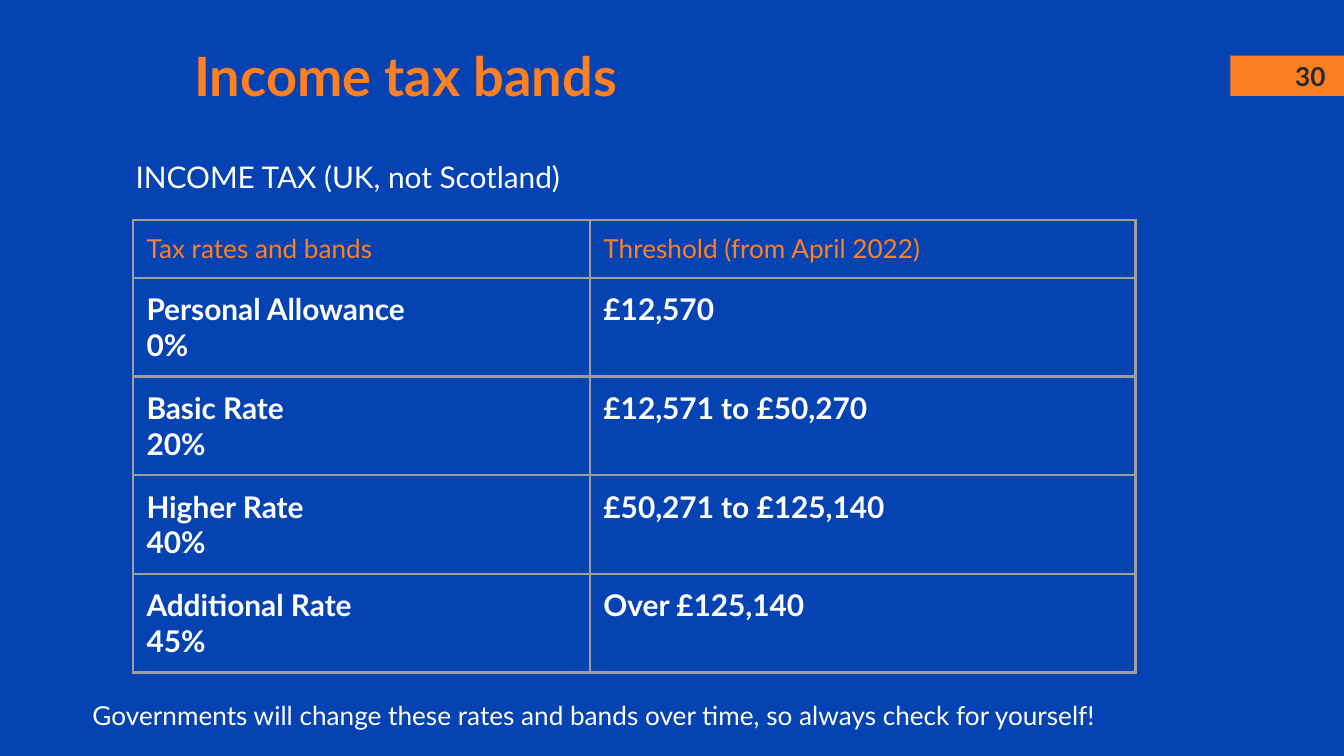
from dataclasses import dataclass

from lxml import etree
from pptx import Presentation
from pptx import util as u
from pptx.dml import color
from pptx.enum import shapes, text
from pptx.oxml import ns

EMU_PER_PX = 4572
SLIDE_SIZE = (2000, 1125)
INSET = 20


@dataclass(frozen=True)
class Theme:
    font: str = "Lato"
    background: str = "0543B3"
    accent: str = "FF8022"
    light: str = "FFFFFF"
    dark: str = "262A33"
    border: str = "9E9E9E"
    border_width: float = 1.5
    title_size: int = 29
    body_size: int = 16
    small_size: int = 14


THEME = Theme()
COLUMN_WIDTHS = (680, 812)
HEADER_HEIGHT, BAND_HEIGHT = 86, 146
HEADINGS = ("Tax rates and bands", "Threshold (from April 2022)")
BANDS = (
    ("Personal Allowance\n0%", "£12,570"),
    ("Basic Rate\n20%", "£12,571 to £50,270"),
    ("Higher Rate\n40%", "£50,271 to £125,140"),
    ("Additional Rate\n45%", "Over £125,140"),
)


def px(length):
    return u.Emu(length * EMU_PER_PX)


def rgb(value):
    return color.RGBColor.from_string(value)


def set_insets(target):
    target.margin_left = target.margin_right = px(INSET)
    target.margin_top = target.margin_bottom = px(INSET)


def write(frame, wording, size, colour, bold=False, align=text.PP_ALIGN.LEFT):
    frame.text = wording
    for paragraph in frame.paragraphs:
        paragraph.alignment = align
        for run in paragraph.runs:
            run.font.name = THEME.font
            run.font.size = u.Pt(size)
            run.font.bold = bold
            run.font.color.rgb = rgb(colour)


def add_title(slide, box, wording):
    title = slide.shapes.title
    title.left, title.top, title.width, title.height = map(px, box)
    frame = title.text_frame
    set_insets(frame)
    frame.auto_size = text.MSO_AUTO_SIZE.NONE
    frame.vertical_anchor = text.MSO_ANCHOR.MIDDLE
    write(frame, wording, THEME.title_size, THEME.accent, bold=True)


def add_text(slide, box, wording, size, colour, anchor=text.MSO_ANCHOR.TOP, **style):
    frame = slide.shapes.add_textbox(*map(px, box)).text_frame
    frame.word_wrap = True
    frame.vertical_anchor = anchor
    set_insets(frame)
    write(frame, wording, size, colour, **style)
    return frame


def add_page_number(slide, number):
    tab = slide.shapes.add_shape(
        shapes.MSO_SHAPE.RECTANGLE, *map(px, (1831, 83, 169, 60))
    )
    tab.shadow.inherit = False
    tab.fill.solid()
    tab.fill.fore_color.rgb = rgb(THEME.accent)
    tab.line.fill.background()
    add_text(slide, (1900, 88, 100, 50), number, THEME.small_size, THEME.dark,
             anchor=text.MSO_ANCHOR.MIDDLE, bold=True,
             align=text.PP_ALIGN.CENTER)


def add_borders(cell):
    properties = cell._tc.get_or_add_tcPr()
    for position, side in enumerate(("lnL", "lnR", "lnT", "lnB")):
        line = etree.Element(ns.qn(f"a:{side}"), w=str(u.Pt(THEME.border_width)))
        fill = etree.SubElement(line, ns.qn("a:solidFill"))
        etree.SubElement(fill, ns.qn("a:srgbClr"), val=THEME.border)
        properties.insert(position, line)


def add_tax_table(slide, left, top):
    rows = (HEADINGS, *BANDS)
    heights = [HEADER_HEIGHT] + [BAND_HEIGHT] * len(BANDS)
    table = slide.shapes.add_table(
        len(rows), len(COLUMN_WIDTHS),
        *map(px, (left, top, sum(COLUMN_WIDTHS), sum(heights))),
    ).table
    table.horz_banding = False
    for column, width in zip(table.columns, COLUMN_WIDTHS):
        column.width = px(width)
    for index, (row, height, wordings) in enumerate(zip(table.rows, heights, rows)):
        row.height = px(height)
        for cell, wording in zip(row.cells, wordings):
            set_insets(cell)
            cell.fill.background()
            add_borders(cell)
            if index == 0:
                write(cell.text_frame, wording, THEME.small_size, THEME.accent)
            else:
                write(cell.text_frame, wording, THEME.body_size, THEME.light,
                      bold=True)


def main():
    presentation = Presentation()
    presentation.slide_width, presentation.slide_height = map(px, SLIDE_SIZE)
    slide = presentation.slides.add_slide(presentation.slide_layouts[5])
    slide.background.fill.solid()
    slide.background.fill.fore_color.rgb = rgb(THEME.background)

    add_page_number(slide, "30")
    subtitle = add_text(slide, (82, 216, 1292, 176), "INCOME TAX (UK, not Scotland)",
                        THEME.body_size, THEME.light)
    subtitle.margin_left = px(INSET + 100)
    add_title(slide, (269, 56, 1380, 112), "Income tax bands")
    add_tax_table(slide, 198, 327)
    add_text(slide, (118, 1021, 1606, 88),
             "Governments will change these rates and bands over time, "
             "so always check for yourself!",
             THEME.small_size, THEME.light)
    presentation.save("out.pptx")


if __name__ == "__main__":
    main()
